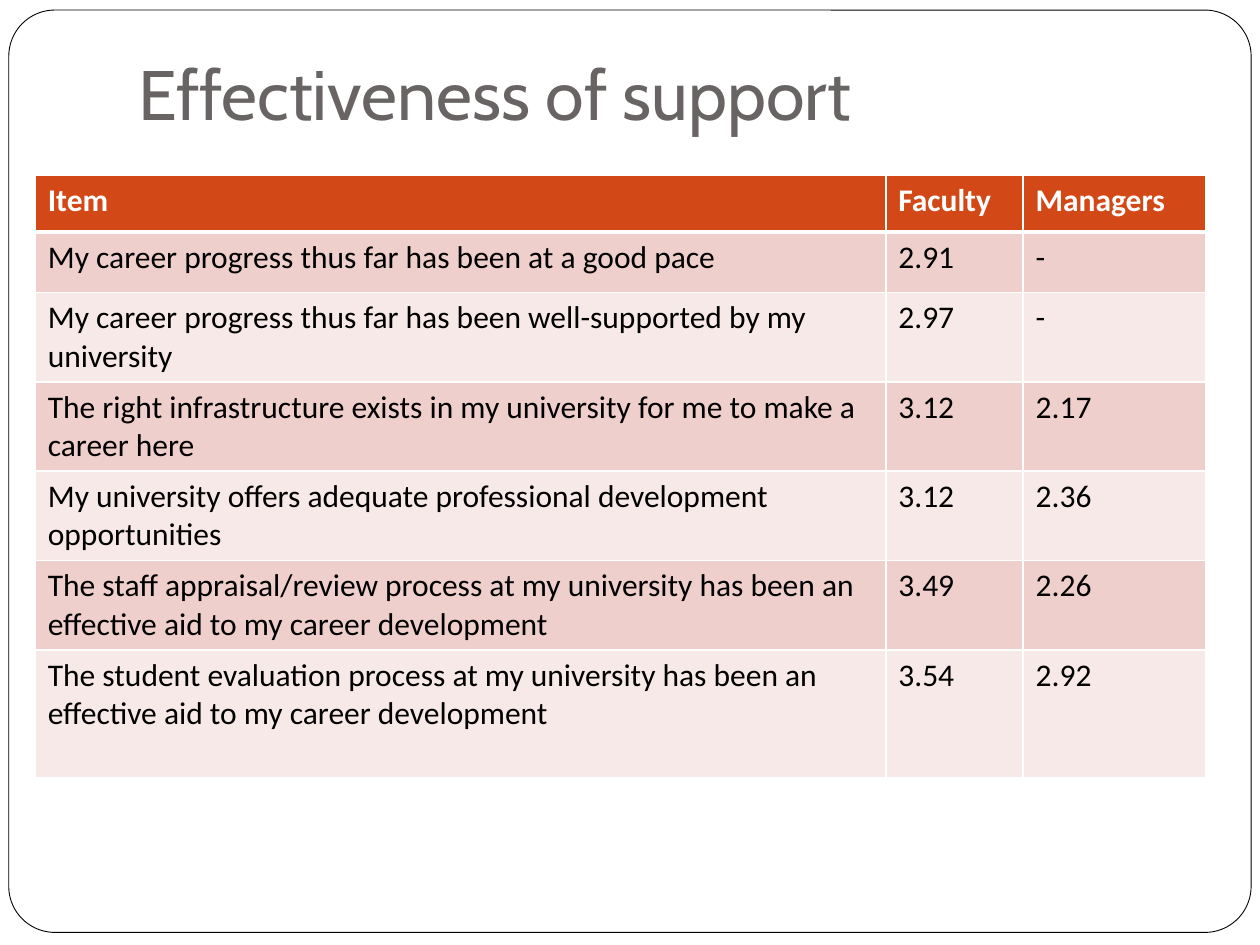
from lxml.etree import SubElement
from pptx import Presentation
from pptx.dml.color import RGBColor
from pptx.enum.shapes import MSO_SHAPE
from pptx.enum.text import MSO_ANCHOR
from pptx.oxml.ns import qn
from pptx.util import Inches, Pt

COLORS = {
    "paper": "FFFFFF",
    "frame": "000000",
    "title": "696464",
    "header": "D34817",
    "odd_row": "EFCFCC",
    "even_row": "F7E9E8",
    "body": "000000",
}
COLUMN_WIDTHS = [6.75, 1.09, 1.45]
ROW_HEIGHTS = [0.45, 0.48] + [0.71] * 4 + [1.01]
RATINGS = [
    ("Item", "Faculty", "Managers"),
    ("My career progress thus far has been at a good pace", "2.91", "-"),
    ("My career progress thus far has been well-supported by my university", "2.97", "-"),
    ("The right infrastructure exists in my university for me to make a career here", "3.12", "2.17"),
    ("My university offers adequate professional development opportunities", "3.12", "2.36"),
    ("The staff appraisal/review process at my university has been an effective aid"
     " to my career development", "3.49", "2.26"),
    ("The student evaluation process at my university has been an effective aid"
     " to my career development", "3.54", "2.92"),
]


def color(role):
    return RGBColor.from_string(COLORS[role])


def add_text(text_frame, words, font, size, role, bold=False):
    run = text_frame.paragraphs[0].add_run()
    run.text = words
    run.font.name = font
    run.font.size = Pt(size)
    run.font.bold = bold
    run.font.color.rgb = color(role)


def add_frame(slide):
    frame = slide.shapes.add_shape(
        MSO_SHAPE.ROUNDED_RECTANGLE, Inches(0.07), Inches(0.08), Inches(9.86), Inches(7.32))
    frame.adjustments[0] = 0.05
    frame.shadow.inherit = False
    frame.fill.solid()
    frame.fill.fore_color.rgb = color("paper")
    frame.line.color.rgb = color("frame")
    frame.line.width = Pt(0.5)


def add_title(slide, words):
    title = slide.shapes.add_textbox(Inches(1), Inches(0.3), Inches(8.5), Inches(0.87))
    text_frame = title.text_frame
    text_frame.word_wrap = True
    text_frame.vertical_anchor = MSO_ANCHOR.BOTTOM
    text_frame.margin_bottom = Inches(0.1)
    add_text(text_frame, words, "Cabin", 40, "title")


def set_borders(cell, top, bottom):
    """Draw white rules around a cell; top and bottom are widths in points."""
    properties = cell._tc.get_or_add_tcPr()
    for side, width in {"L": 1, "R": 1, "T": top, "B": bottom}.items():
        line = SubElement(properties, qn(f"a:ln{side}"), w=str(Pt(width)))
        fill = SubElement(line, qn("a:solidFill"))
        SubElement(fill, qn("a:srgbClr"), val=COLORS["paper"])


def fill_cell(cell, words, row):
    is_header = row == 0
    set_borders(cell, top=3 if row == 1 else 1, bottom=3 if is_header else 1)
    cell.fill.solid()
    band = "header" if is_header else "odd_row" if row % 2 else "even_row"
    cell.fill.fore_color.rgb = color(band)
    add_text(cell.text_frame, words, "Calibri", 18, "paper" if is_header else "body", is_header)


def add_ratings(slide):
    table = slide.shapes.add_table(
        len(RATINGS), len(COLUMN_WIDTHS), Inches(0.28), Inches(1.39),
        Inches(sum(COLUMN_WIDTHS)), Inches(sum(ROW_HEIGHTS))).table
    for column, width in zip(table.columns, COLUMN_WIDTHS):
        column.width = Inches(width)
    for row, (height, entries) in enumerate(zip(ROW_HEIGHTS, RATINGS)):
        table.rows[row].height = Inches(height)
        for column, words in enumerate(entries):
            fill_cell(table.cell(row, column), words, row)


def main():
    presentation = Presentation()
    presentation.slide_width = Inches(10)
    presentation.slide_height = Inches(7.5)
    slide = presentation.slides.add_slide(presentation.slide_layouts[6])
    add_frame(slide)
    add_title(slide, "Effectiveness of support")
    add_ratings(slide)
    presentation.save("out.pptx")


if __name__ == "__main__":
    main()
